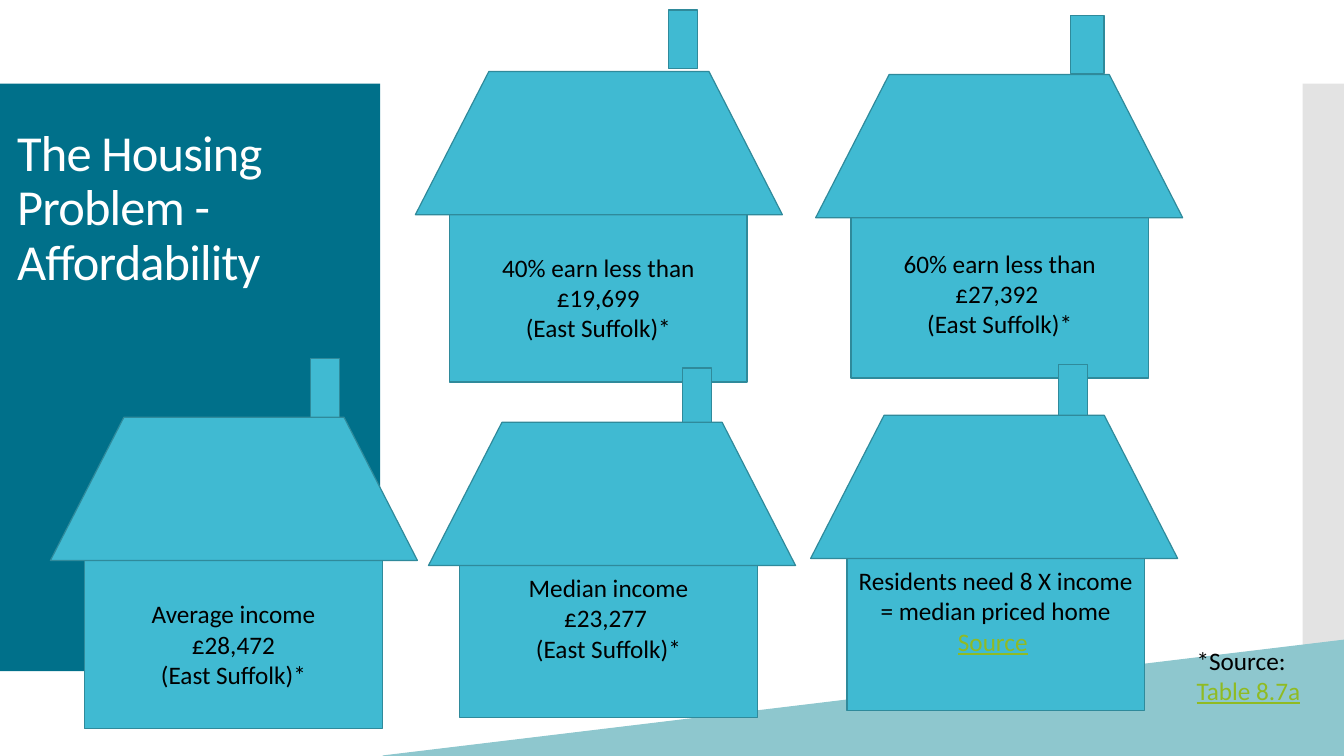
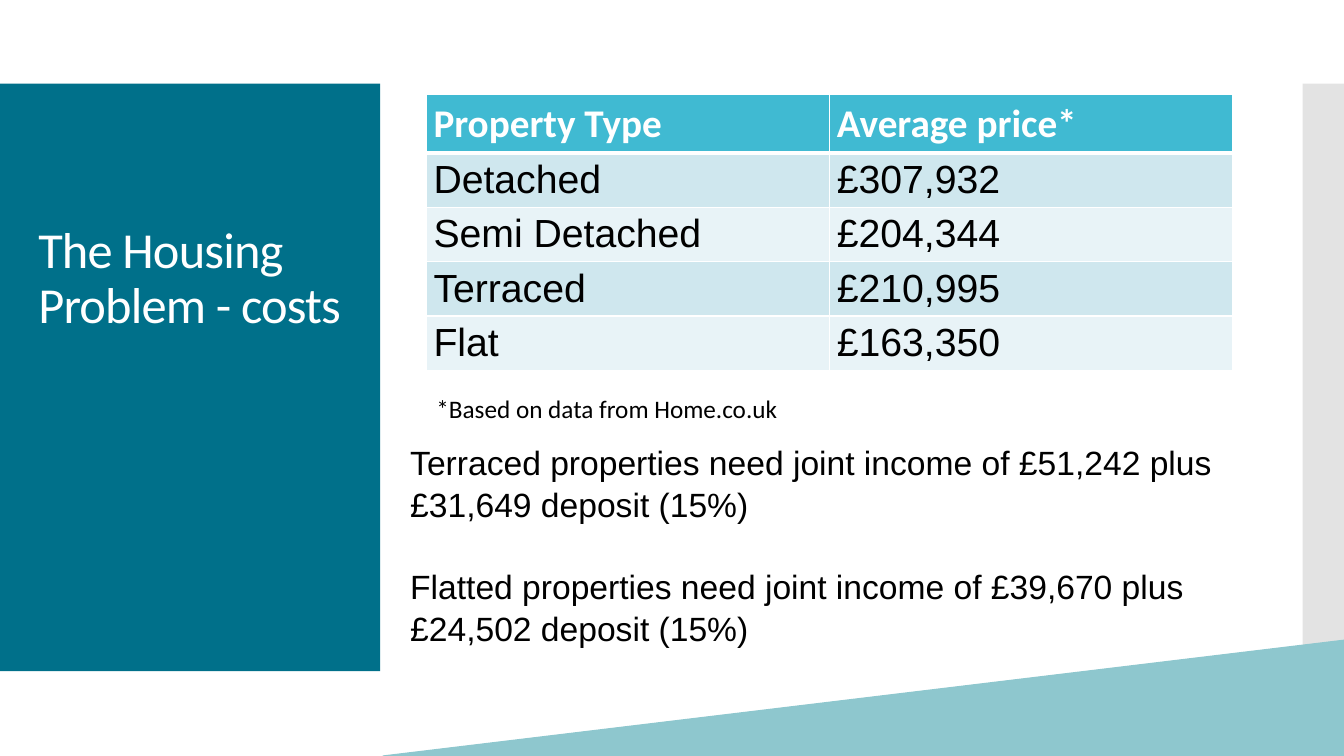
"""Build two slides on the housing problem: affordability and costs."""
from lxml.etree import SubElement
from pptx import Presentation
from pptx.dml.color import RGBColor
from pptx.enum.shapes import MSO_SHAPE
from pptx.enum.text import MSO_ANCHOR, PP_ALIGN
from pptx.oxml.ns import qn
from pptx.util import Inches, Pt

WHITE = RGBColor(0xFF, 0xFF, 0xFF)
BLACK = RGBColor(0x00, 0x00, 0x00)
TEAL = RGBColor(0x00, 0x70, 0x8A)
GREY = RGBColor(0xC8, 0xC8, 0xC8)
PALE_TEAL = RGBColor(0x8E, 0xC7, 0xCE)
SKY = RGBColor(0x40, 0xBA, 0xD2)
SKY_EDGE = RGBColor(0x2F, 0x8A, 0x9B)
SOURCE_GREEN = RGBColor(0x90, 0xBB, 0x23)
ROW_TINTS = (RGBColor(0xCF, 0xE7, 0xEE), RGBColor(0xE8, 0xF3, 0xF7))

AREA = "(East Suffolk)*"
SOURCE_NAMES = ("Source ", "Table 8.7a ")
WALL_SIZE = (2.95, 1.68)
ROOF_SIZE = (3.64, 1.42)
CHIMNEY_HEIGHT = 0.58
HOUSES = [
    {"lines": ["60% earn less than", "£27,392 ", AREA],
     "wall": (8.44, 2.07), "roof": (8.09, 0.74), "chimney": (10.62, 0.15, 0.33), "foot": 0.05},
    {"lines": ["40% earn less than", "£19,699", AREA],
     "wall": (4.46, 2.11), "roof": (4.12, 0.71), "chimney": (6.63, 0.1, 0.29), "foot": 0.05},
    {"lines": ["Average income", "£28,472", AREA],
     "wall": (0.84, 5.55), "roof": (0.5, 4.14), "chimney": (3.08, 3.56, 0.29), "foot": 0.05},
    {"lines": ["Median income", "£23,277 ", AREA],
     "wall": (4.56, 5.44), "roof": (4.25, 4.19), "chimney": (6.77, 3.65, 0.29), "foot": 0.35},
    {"lines": ["Residents need 8 X income = median priced home", "Source "],
     "wall": (8.4, 5.37), "roof": (8.04, 4.12), "chimney": (10.5, 3.62, 0.29), "foot": 0.35},
]
FOOTNOTE = ["*Source:", "Table 8.7a "]

PRICES = [
    ("Property Type", "Average price*"),
    ("Detached", "£307,932"),
    ("Semi Detached", "£204,344"),
    ("Terraced", "£210,995"),
    ("Flat", "£163,350"),
]
PRICE_NOTE = ["*Based on data from Home.co.uk"]
INCOME_NEEDS = [
    "Terraced properties need joint income of £51,242 plus £31,649 deposit (15%)",
    "Flatted properties need joint income of £39,670 plus £24,502 deposit (15%)",
]


def add_block(shapes, preset, box, fill, edge=None):
    block = shapes.add_shape(preset, *map(Inches, box))
    block.shadow.inherit = False
    block.fill.solid()
    block.fill.fore_color.rgb = fill
    if edge is None:
        block.line.fill.background()
    else:
        block.line.color.rgb = edge
        block.line.width = Pt(0.85)
    return block


def add_run(paragraph, text, size, font="Calibri", color=BLACK, bold=False):
    run = paragraph.add_run()
    run.text = text
    run.font.size = Pt(size)
    run.font.name = font
    run.font.color.rgb = color
    run.font.bold = bold
    return run


def write_lines(frame, lines, size=18, font="Calibri", align=PP_ALIGN.LEFT):
    frame.word_wrap = True
    for index, line in enumerate(lines):
        paragraph = frame.paragraphs[0] if index == 0 else frame.add_paragraph()
        paragraph.alignment = align
        is_source = line in SOURCE_NAMES
        run = add_run(paragraph, line.strip() if is_source else line, size, font,
                      SOURCE_GREEN if is_source else BLACK)
        if is_source:
            run.font.underline = True
            add_run(paragraph, " ", size, font)
    return frame


def add_text(slide, box, lines, **style):
    return write_lines(slide.shapes.add_textbox(*map(Inches, box)).text_frame, lines, **style)


def move_bands_to_layout(slide):
    panel = add_block(slide.shapes, MSO_SHAPE.RECTANGLE, (0, 0.83, 3.77, 5.83), TEAL)
    strip = add_block(slide.shapes, MSO_SHAPE.RECTANGLE, (12.92, 0.83, 0.42, 5.83), GREY)
    tint = strip._element.spPr.find(qn("a:solidFill"))[0]
    SubElement(tint, qn("a:alpha")).set("val", "50000")
    wedge = add_block(slide.shapes, MSO_SHAPE.ISOSCELES_TRIANGLE, (3.8, 6.35, 9.54, 1.15),
                      PALE_TEAL, PALE_TEAL)
    wedge.adjustments[0] = 1.0
    tree = slide.slide_layout.shapes._spTree
    for position, band in enumerate((panel, strip, wedge)):
        band._element.nvSpPr.cNvPr.set("id", str(101 + position))
        tree.insert(2 + position, band._element)


def add_titled_slide(deck, title, box):
    slide = deck.slides.add_slide(deck.slide_layouts[5])
    heading = slide.shapes.title
    heading.left, heading.top, heading.width, heading.height = map(Inches, box)
    frame = heading.text_frame
    frame.word_wrap = True
    frame.vertical_anchor = MSO_ANCHOR.MIDDLE
    paragraph = frame.paragraphs[0]
    paragraph.alignment = PP_ALIGN.LEFT
    paragraph.line_spacing = 0.9
    run = add_run(paragraph, title, 36, color=WHITE)
    run._r.get_or_add_rPr().set("spc", "-60")
    return slide


def add_house(slide, house):
    parts = slide.shapes.add_group_shape().shapes
    wall = add_block(parts, MSO_SHAPE.RECTANGLE, house["wall"] + WALL_SIZE, SKY, SKY_EDGE)
    frame = write_lines(wall.text_frame, house["lines"], align=PP_ALIGN.CENTER)
    frame.vertical_anchor = MSO_ANCHOR.MIDDLE
    frame.margin_bottom = Inches(house["foot"])
    add_block(parts, MSO_SHAPE.RECTANGLE, house["chimney"] + (CHIMNEY_HEIGHT,), SKY, SKY_EDGE)
    roof = add_block(parts, MSO_SHAPE.FLOWCHART_MANUAL_OPERATION, house["roof"] + ROOF_SIZE,
                     SKY, SKY_EDGE)
    roof.rotation = 180


def set_borders(cell, top, bottom):
    for side, width in (("L", 1), ("R", 1), ("T", top), ("B", bottom)):
        line = SubElement(cell._tc.get_or_add_tcPr(), qn(f"a:ln{side}"), w=str(Pt(width)))
        fill = SubElement(line, qn("a:solidFill"))
        SubElement(fill, qn("a:srgbClr"), val=str(WHITE))


def add_price_table(slide):
    box = map(Inches, (4.23, 0.94, 8, 2.72))
    table = slide.shapes.add_table(len(PRICES), 2, *box).table
    for row, values in enumerate(PRICES):
        is_header = row == 0
        table.rows[row].height = Inches(0.56 if is_header else 0.54)
        for column, value in enumerate(values):
            cell = table.cell(row, column)
            set_borders(cell, 3 if row == 1 else 1, 3 if is_header else 1)
            cell.fill.solid()
            cell.fill.fore_color.rgb = SKY if is_header else ROW_TINTS[(row - 1) % 2]
            cell.margin_left = cell.margin_right = Inches(0.07)
            cell.margin_top = cell.margin_bottom = Inches(0.05)
            add_run(cell.text_frame.paragraphs[0], value, 28,
                    "Calibri" if is_header else "Arial",
                    WHITE if is_header else BLACK, is_header)


def main():
    deck = Presentation()
    deck.slide_width, deck.slide_height = Inches(13.33), Inches(7.5)

    affordability = add_titled_slide(deck, "The Housing Problem - Affordability",
                                     (0.07, 0.85, 2.71, 2.46))
    move_bands_to_layout(affordability)
    for house in HOUSES:
        add_house(affordability, house)
    add_text(affordability, (11.77, 6.35, 1.3, 0.71), FOOTNOTE)

    costs = add_titled_slide(deck, "The Housing Problem - costs", (0.28, 1.23, 3.22, 3.09))
    add_price_table(costs)
    add_text(costs, (4.23, 3.85, 3.62, 0.4), PRICE_NOTE)
    needs = add_text(costs, (3.97, 4.32, 8.75, 2.12), INCOME_NEEDS, size=24, font="Arial")
    for index, paragraph in enumerate(needs.paragraphs):
        paragraph.line_spacing = 1.04
        paragraph.space_before = Pt(28.8 * index)

    deck.save("out.pptx")


if __name__ == "__main__":
    main()
